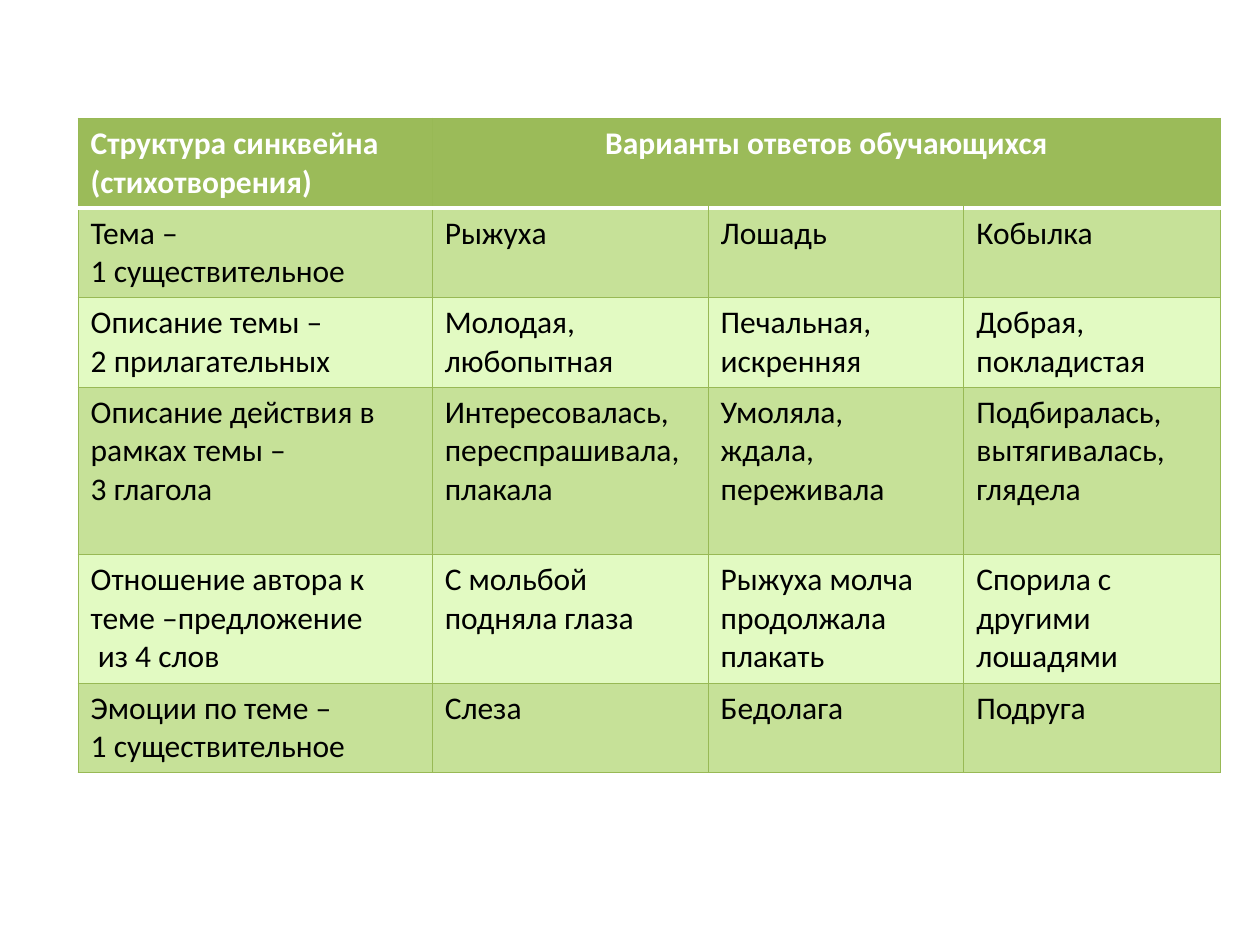
from lxml.etree import SubElement
from pptx import Presentation
from pptx.dml.color import RGBColor
from pptx.enum.text import PP_ALIGN
from pptx.oxml.ns import qn
from pptx.util import Inches, Pt

COLORS = {
    "head": "9BBB59",
    "dark": "C6E198",
    "light": "E2FAC2",
    "line": "98B955",
    "white": "FFFFFF",
    "black": "000000",
}
WIDTHS = [2.81, 2.19, 2.03, 2.04]
HEIGHTS = [0.71, 0.71, 0.71, 1.33, 1.02, 0.71]
ROWS = [
    ["Структура синквейна (стихотворения)", "Варианты ответов обучающихся", "", ""],
    ["Тема –\n1 существительное", "Рыжуха", "Лошадь", "Кобылка"],
    ["Описание темы –\n2 прилагательных", "Молодая, любопытная",
     "Печальная, искренняя", "Добрая, покладистая"],
    ["Описание действия в рамках темы –\n3 глагола",
     "Интересовалась, переспрашивала, плакала",
     "Умоляла,\nждала,\nпереживала", "Подбиралась, вытягивалась,\nглядела"],
    ["Отношение автора к теме –предложение\n из 4 слов", "С мольбой подняла глаза",
     "Рыжуха молча продолжала плакать", "Спорила с другими лошадями"],
    ["Эмоции по теме –\n1 существительное", "Слеза", "Бедолага", "Подруга"],
]


def color(name):
    return RGBColor.from_string(COLORS[name])


def add_text(cell, text, tone, bold, align):
    frame = cell.text_frame
    for i, line in enumerate(text.split("\n")):
        para = frame.paragraphs[0] if i == 0 else frame.add_paragraph()
        para.alignment = align
        run = para.add_run()
        run.text = line
        font = run.font
        font.name, font.size, font.bold = "Calibri", Pt(18), bold
        font.color.rgb = color(tone)


def add_edge(cell, side, tone, width):
    props = cell._tc.get_or_add_tcPr()
    line = SubElement(props, qn(f"a:ln{side}"), w=str(Pt(width)))
    fill = SubElement(line, qn("a:solidFill"))
    SubElement(fill, qn("a:srgbClr"), val=COLORS[tone])


def style_cell(cell, row):
    for side in "LRTB":
        white = (row, side) in [(0, "B"), (1, "T")]
        add_edge(cell, side, *(("white", 2) if white else ("line", 0.75)))
    cell.fill.solid()
    tone = "head" if row == 0 else "dark" if row % 2 else "light"
    cell.fill.fore_color.rgb = color(tone)


def add_grid(slide):
    frame = slide.shapes.add_table(
        len(ROWS), len(WIDTHS), Inches(0.62), Inches(0.94),
        Inches(sum(WIDTHS)), Inches(sum(HEIGHTS)))
    table = frame.table
    for col, width in zip(table.columns, WIDTHS):
        col.width = Inches(width)
    for row, height in zip(table.rows, HEIGHTS):
        row.height = Inches(height)
    table.cell(0, 1).merge(table.cell(0, 3))
    for r, texts in enumerate(ROWS):
        for c, text in enumerate(texts):
            cell = table.cell(r, c)
            style_cell(cell, r)
            if text:
                align = PP_ALIGN.CENTER if cell.is_merge_origin else PP_ALIGN.LEFT
                add_text(cell, text, "black" if r else "white", r == 0, align)


def main():
    deck = Presentation()
    deck.slide_width, deck.slide_height = Inches(10), Inches(7.5)
    slide = deck.slides.add_slide(deck.slide_layouts[6])
    add_grid(slide)
    deck.save("out.pptx")


if __name__ == "__main__":
    main()
